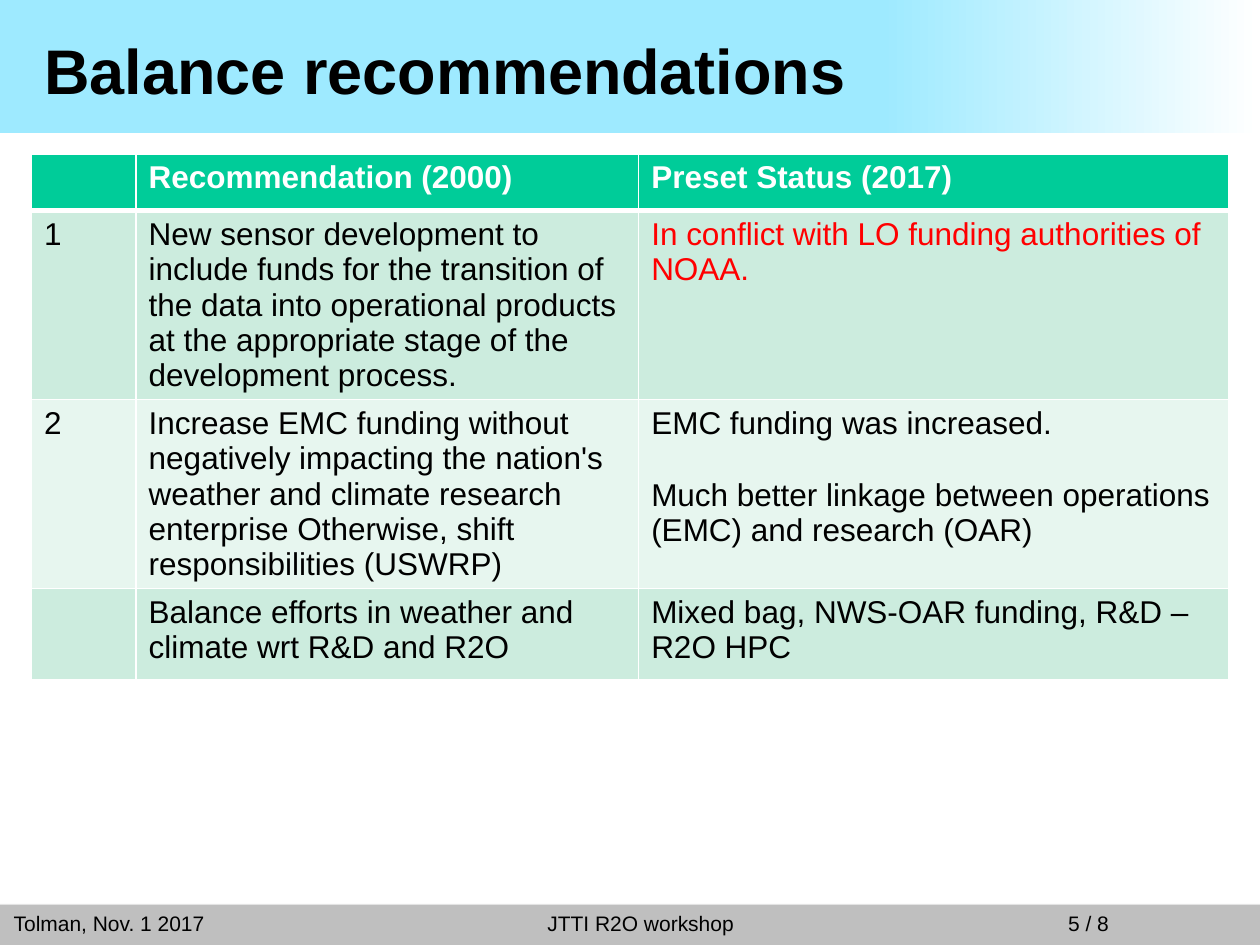
from copy import deepcopy
from dataclasses import dataclass
from typing import Any

from lxml import etree
from pptx import Presentation
from pptx.dml.color import RGBColor as Rgb
from pptx.enum.shapes import MSO_SHAPE as Shape
from pptx.enum.text import MSO_ANCHOR as Anchor, MSO_AUTO_SIZE as AutoSize, PP_ALIGN as Align
from pptx.oxml import parse_xml
from pptx.oxml.ns import nsdecls, qn
from pptx.util import Pt

COLORS = {
    "ink": "000000", "white": "FFFFFF", "alert": "FF0000",
    "sky": "9EEAFF", "bar": "BFBFBF",
    "header": "00CC99", "odd": "CCECDE", "even": "E7F6EF",
}
COLUMNS = [59.8, 287.2, 337]
ROW_HEIGHTS = [32.4, 108, 108, 52]
ROWS = [
    [[], ["Recommendation (2000)"], ["Preset Status (2017)"]],
    [["1"],
     ["New sensor development to include funds for the transition of the data into "
      "operational products at the appropriate stage of the development process."],
     ["In conflict with LO funding authorities of NOAA."]],
    [["2"],
     ["Increase EMC funding without negatively impacting the nation's weather and climate "
      "research enterprise Otherwise, shift responsibilities (USWRP)"],
     ["EMC funding was increased.",
      "Much better linkage between operations (EMC) and research (OAR)"]],
    [[],
     ["Balance efforts in weather and climate wrt R&D and R2O"],
     ["Mixed bag, NWS-OAR funding, R&D – R2O HPC"]],
]
ALERT_CELL = (1, 2)
FOOTERS = [
    ("Tolman, Nov. 1 2017", 0.7, 399.6, Align.LEFT),
    ("5 / 8", 249.1, 391.7, Align.RIGHT),
    ("JTTI R2O workshop", 166.3, 399.6, Align.CENTER),
]


@dataclass
class SlideBuilder:
    """Holds the text style and the slide being built."""

    slide: Any
    font: str = "Arial"
    body_size: float = 18
    paragraph_gap: float = 20.7

    def add_span(self, para, text, size, color="ink", bold=False):
        span = para.add_run()
        span.text = text
        span.font.name, span.font.size, span.font.bold = self.font, Pt(size), bold
        span.font.color.rgb = Rgb.from_string(COLORS[color])

    def rectangle(self, left, top, width, height):
        box = self.slide.shapes.add_shape(Shape.RECTANGLE, Pt(left), Pt(top), Pt(width), Pt(height))
        box.shadow.inherit = False
        box.line.fill.background()
        return box

    def title_band(self, *place):
        box = self.rectangle(*place)
        fill = box.fill
        fill.gradient()
        fill.gradient_angle = 0
        first, last = fill.gradient_stops
        first.color.rgb = Rgb.from_string(COLORS["sky"])
        last.color.rgb = Rgb.from_string(COLORS["white"])
        first.position, last.position = 0, 1
        stops = box.element.spPr.find(qn("a:gradFill")).find(qn("a:gsLst"))
        middle = deepcopy(stops[0])
        middle.set("pos", "70000")
        stops.insert(1, middle)

    def footer_bar(self, *place):
        box = self.rectangle(*place)
        box.fill.solid()
        box.fill.fore_color.rgb = Rgb.from_string(COLORS["bar"])
        effects = box.element.spPr.find(qn("a:effectLst"))
        effects.append(parse_xml(
            f'<a:outerShdw {nsdecls("a")} blurRad="{Pt(3.1)}" dist="{Pt(1.8)}" dir="5400000" '
            f'rotWithShape="0"><a:srgbClr val="{COLORS["ink"]}"><a:alpha val="35000"/>'
            '</a:srgbClr></a:outerShdw>'))

    def footer(self, text, left, width, align):
        box = self.slide.shapes.add_textbox(Pt(left), Pt(516.2), Pt(width), Pt(21.8))
        frame = box.text_frame
        frame.word_wrap = True
        frame.auto_size = AutoSize.SHAPE_TO_FIT_TEXT
        frame.vertical_anchor = Anchor.BOTTOM
        para = frame.paragraphs[0]
        para.alignment = align
        self.add_span(para, text, 12)

    def title(self, text, left, top, width, height):
        box = self.slide.shapes.title
        box.element.getparent().append(box.element)
        box.left, box.top, box.width, box.height = Pt(left), Pt(top), Pt(width), Pt(height)
        frame = box.text_frame
        frame.vertical_anchor = Anchor.MIDDLE
        frame.auto_size = AutoSize.NONE
        para = frame.paragraphs[0]
        para.alignment = Align.LEFT
        self.add_span(para, text, 36, bold=True)

    def borders(self, cell, top, bottom):
        properties = cell._tc.get_or_add_tcPr()
        widths = {"lnL": 1, "lnR": 1, "lnT": top, "lnB": bottom}
        for index, (side, width) in enumerate(widths.items()):
            line = etree.Element(qn(f"a:{side}"), w=str(Pt(width)))
            solid = etree.SubElement(line, qn("a:solidFill"))
            etree.SubElement(solid, qn("a:srgbClr"), val=COLORS["white"])
            properties.insert(index, line)

    def cell(self, cell, texts, fill, color, bold):
        cell.fill.solid()
        cell.fill.fore_color.rgb = Rgb.from_string(COLORS[fill])
        frame = cell.text_frame
        for index, text in enumerate(texts):
            para = frame.add_paragraph() if index else frame.paragraphs[0]
            if index:
                para.space_before = Pt(self.paragraph_gap)
            self.add_span(para, text, self.body_size, color, bold)

    def table(self, left, top, rows):
        frame = self.slide.shapes.add_table(len(rows), len(COLUMNS), Pt(left), Pt(top),
                                            Pt(sum(COLUMNS)), Pt(sum(ROW_HEIGHTS)))
        grid = frame.table
        for column, width in zip(grid.columns, COLUMNS):
            column.width = Pt(width)
        for row, height in zip(grid.rows, ROW_HEIGHTS):
            row.height = Pt(height)
        for r, row in enumerate(rows):
            is_header = r == 0
            fill = "header" if is_header else "odd" if r % 2 else "even"
            for c, texts in enumerate(row):
                color = "white" if is_header else "alert" if (r, c) == ALERT_CELL else "ink"
                self.cell(grid.cell(r, c), texts, fill, color, is_header)
                self.borders(grid.cell(r, c), 3 if r == 1 else 1, 3 if is_header else 1)


def main():
    deck = Presentation()
    deck.slide_width, deck.slide_height = Pt(720), Pt(540)
    page = SlideBuilder(deck.slides.add_slide(deck.slide_layouts[5]))
    page.footer_bar(-1.4, 517, 721.4, 26.6)
    for footer in FOOTERS:
        page.footer(*footer)
    page.title_band(-1.4, 0, 721.4, 76.3)
    page.title("Balance recommendations", 18, 11.5, 684, 56.2)
    page.table(18, 88, ROWS)
    deck.save("out.pptx")


if __name__ == "__main__":
    main()
